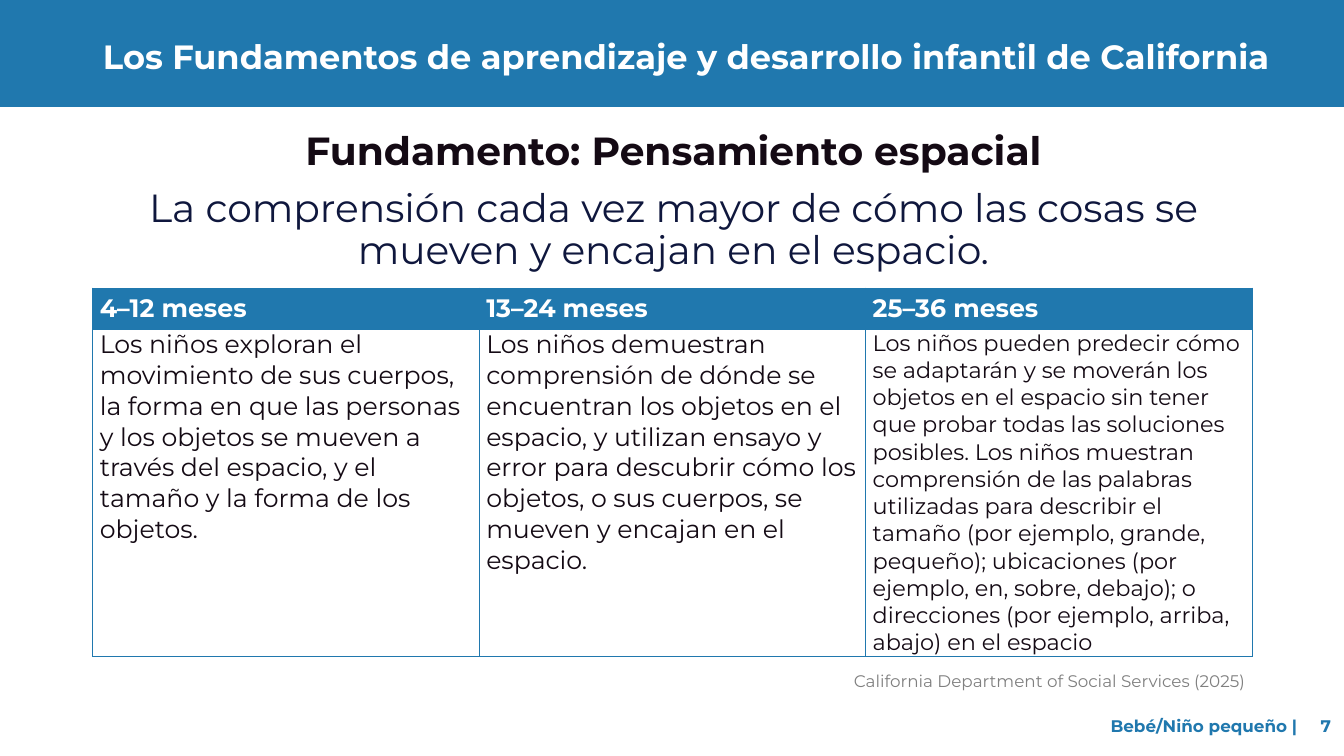
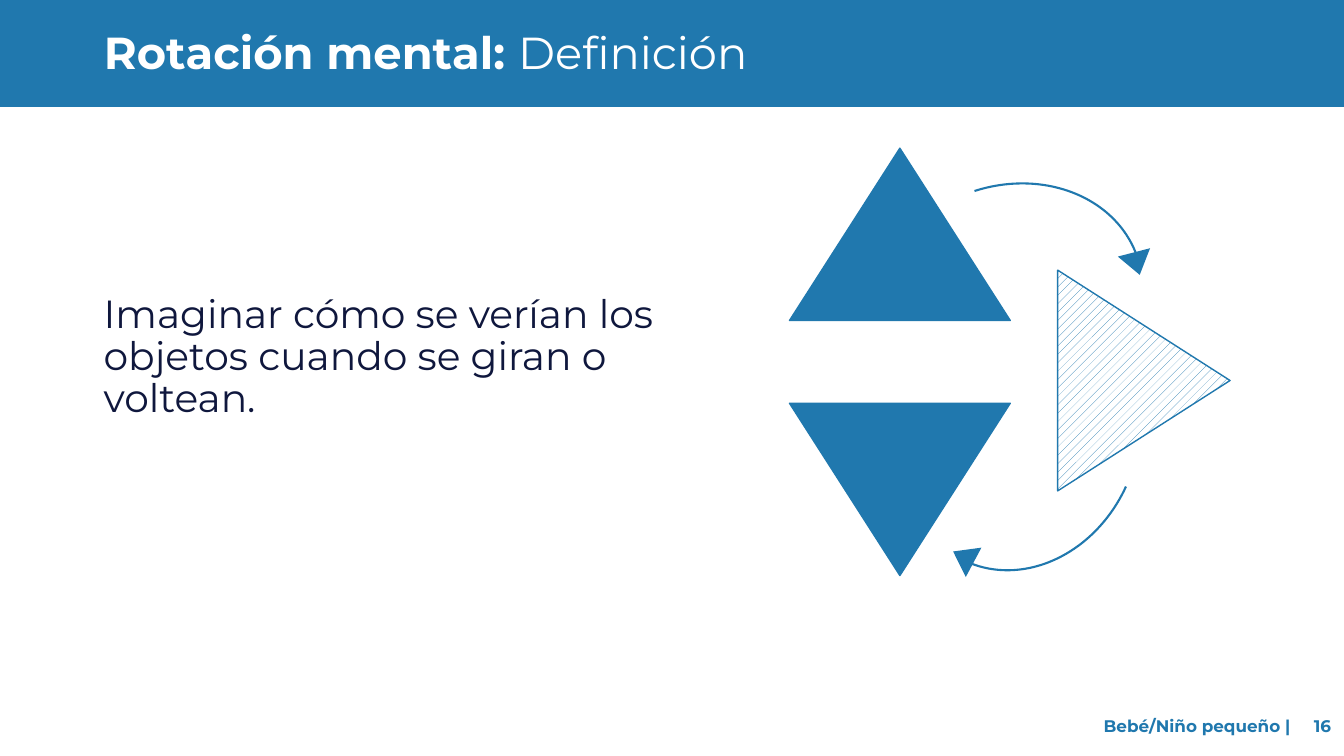
"""Build two slides on spatial thinking and mental rotation."""
from lxml import etree
from pptx import Presentation
from pptx import util as u
from pptx.dml.color import RGBColor
from pptx.enum import dml, shapes, text
from pptx.oxml import ns

BLUE = RGBColor(0x20, 0x78, 0xAE)
WHITE = RGBColor(0xFF, 0xFF, 0xFF)
BLACK = RGBColor(0x14, 0x0A, 0x14)
NAVY = RGBColor(0x0F, 0x17, 0x3D)
GRAY = RGBColor(0x80, 0x80, 0x80)
FONT = "Montserrat"
WIDTH, HEIGHT = 13.33, 7.5
LEFT, TOP, MIDDLE = text.PP_ALIGN.LEFT, text.MSO_ANCHOR.TOP, text.MSO_ANCHOR.MIDDLE
CENTER, RIGHT = text.PP_ALIGN.CENTER, text.PP_ALIGN.RIGHT
TRIANGLE = shapes.MSO_SHAPE.ISOSCELES_TRIANGLE

AGES = [
    ("4–12 meses", 18,
     "Los niños exploran el movimiento de sus cuerpos, la forma en que las personas "
     "y los objetos se mueven a través del espacio, y el tamaño y la forma de los objetos."),
    ("13–24 meses", 18,
     "Los niños demuestran comprensión de dónde se encuentran los objetos en el espacio, "
     "y utilizan ensayo y error para descubrir cómo los objetos, o sus cuerpos, "
     "se mueven y encajan en el espacio."),
    ("25–36 meses", 16,
     "Los niños pueden predecir cómo se adaptarán y se moverán los objetos en el espacio "
     "sin tener que probar todas las soluciones posibles. Los niños muestran comprensión "
     "de las palabras utilizadas para describir el tamaño (por ejemplo, grande, pequeño); "
     "ubicaciones (por ejemplo, en, sobre, debajo); o direcciones (por ejemplo, arriba, "
     "abajo) en el espacio"),
]


def place(shape, left, top, width, height):
    """Set the position and size of a shape in inches."""
    shape.left, shape.top = u.Inches(left), u.Inches(top)
    shape.width, shape.height = u.Inches(width), u.Inches(height)


def add_run(paragraph, words, size, color, bold=False):
    """Append a formatted run to a paragraph and return it."""
    run = paragraph.add_run()
    run.text = words
    run.font.name, run.font.size, run.font.bold = FONT, u.Pt(size), bold
    run.font.color.rgb = color
    return run


def write(frame, paragraphs, size, color, align=LEFT, anchor=TOP, spacing=1, gap=0):
    """Fill a text frame with paragraphs given as lists of (text, format) runs."""
    frame.word_wrap = True
    frame.auto_size = text.MSO_AUTO_SIZE.NONE
    frame.vertical_anchor = anchor
    for index, runs in enumerate(paragraphs):
        paragraph = frame.add_paragraph() if index else frame.paragraphs[0]
        paragraph.alignment, paragraph.line_spacing = align, spacing
        paragraph.space_before = u.Pt(gap if index else 0)
        for words, changes in runs:
            add_run(paragraph, words, **{"size": size, "color": color, **changes})


def add_text(slide, box, paragraphs, **style):
    """Add a text box and return its text frame."""
    frame = slide.shapes.add_textbox(*map(u.Inches, box)).text_frame
    write(frame, paragraphs, **style)
    return frame


def add_figure(slide, kind, box, rotation=0, line=None, filled=True):
    """Add a rotated blue preset shape."""
    shape = slide.shapes.add_shape(kind, *map(u.Inches, box))
    shape.shadow.inherit = False
    shape.rotation = rotation
    if filled:
        shape.fill.solid()
        shape.fill.fore_color.rgb = BLUE
    else:
        shape.fill.background()
    if line:
        shape.line.color.rgb, shape.line.width = BLUE, u.Pt(line)
    else:
        shape.line.fill.background()
    return shape


def add_slide(presentation, number, title_box, title_runs, title_size):
    """Add a slide with the blue band, title and numbered footer."""
    slide = presentation.slides.add_slide(presentation.slide_layouts[5])
    band = add_figure(slide, shapes.MSO_SHAPE.RECTANGLE, (0, 0, WIDTH, 1.06))
    slide.shapes.title.element.addprevious(band.element)
    place(slide.shapes.title, *title_box)
    write(slide.shapes.title.text_frame, [title_runs], title_size, WHITE, spacing=0.9)
    footer = add_text(slide, (9.49, 7, 3.81, 0.4), [[("Bebé/Niño pequeño |", {"bold": True})]],
                      size=12, color=BLUE, align=RIGHT, anchor=MIDDLE)
    space = add_run(footer.paragraphs[0], " ", 12, BLUE, True)
    space.font._element.set("spc", "1320")
    add_run(footer.paragraphs[0], str(number), 12, BLUE, True)
    return slide


def add_borders(cell):
    """Draw a thin blue line on each side of a table cell."""
    properties = cell._tc.get_or_add_tcPr()
    for side in ("lnL", "lnR", "lnT", "lnB"):
        line = etree.SubElement(properties, ns.qn(f"a:{side}"), w=str(u.Pt(1)))
        fill = etree.SubElement(line, ns.qn("a:solidFill"))
        etree.SubElement(fill, ns.qn("a:srgbClr"), val=str(BLUE))


def fill_cell(cell, words, size, color, fill, anchor=TOP, bold=False):
    """Write and format one table cell."""
    add_borders(cell)
    cell.fill.solid()
    cell.fill.fore_color.rgb = fill
    cell.margin_left = u.Inches(0.07)
    cell.margin_right = cell.margin_top = cell.margin_bottom = 0
    cell.vertical_anchor = anchor
    add_run(cell.text_frame.paragraphs[0], words, size, color, bold)


def add_age_table(slide, box, header_height):
    """Add the table with one column for each age range."""
    table = slide.shapes.add_table(2, len(AGES), *map(u.Inches, box)).table
    table.horz_banding = False
    table.rows[0].height = u.Inches(header_height)
    table.rows[1].height = u.Inches(box[3] - header_height)
    for column, (ages, size, description) in enumerate(AGES):
        fill_cell(table.cell(0, column), ages, 18, WHITE, BLUE, MIDDLE, True)
        fill_cell(table.cell(1, column), description, size, BLACK, WHITE)


def build_foundation(presentation):
    """Build the slide on the spatial thinking foundation."""
    title = "Los Fundamentos de aprendizaje y desarrollo infantil de California"
    slide = add_slide(presentation, 7, (0.92, 0.35, 11.85, 0.46), [(title, {"bold": True})], 24)
    add_text(slide, (0.93, 1.26, 11.5, 1.61), [
        [("Fundamento: Pensamiento espacial", {"color": BLACK, "bold": True})],
        [("La comprensión cada vez mayor de cómo las cosas se mueven y encajan en el espacio.", {})],
    ], size=28, color=NAVY, align=CENTER, spacing=0.9, gap=10)
    add_age_table(slide, (0.92, 2.86, 11.5, 3.64), 0.41)
    add_text(slide, (0.83, 6.61, 11.62, 0.3),
             [[("California Department of Social Services (2025)", {})]],
             size=12, color=GRAY, align=RIGHT)


def build_rotation(presentation):
    """Build the slide that defines mental rotation."""
    slide = add_slide(presentation, 16, (0.93, 0.26, 11.85, 0.59),
                      [("Rotación mental: ", {"bold": True}), ("Definición", {})], 32)
    add_text(slide, (0.93, 1.37, 6.31, 4.36),
             [[("Imaginar cómo se verían los objetos cuando se giran o voltean.", {})]],
             size=28, color=NAVY, anchor=MIDDLE, spacing=0.9)
    for left, top, rotation in ((7.83, 1.47, 0), (7.83, 4, 180), (10.25, 2.92, 90)):
        triangle = add_figure(slide, TRIANGLE, (left, top, 2.19, 1.71), rotation, line=1)
    triangle.fill.patterned()
    triangle.fill.pattern = dml.MSO_PATTERN.PERCENT_20
    triangle.fill.fore_color.rgb, triangle.fill.back_color.rgb = BLUE, WHITE
    arrows = (((8.68, 1.84), 342.1, (11.11, 2.5), 165.5),
              ((8.8, 3.22), 114.6, (9.39, 5.41), 298))
    for arc, arc_rotation, tip, tip_rotation in arrows:
        add_figure(slide, shapes.MSO_SHAPE.ARC, (*arc, 2.67, 2.27), arc_rotation, 1.5, False)
        add_figure(slide, TRIANGLE, (*tip, 0.33, 0.23), tip_rotation)


def main():
    """Build and save the presentation."""
    presentation = Presentation()
    presentation.slide_width, presentation.slide_height = u.Inches(WIDTH), u.Inches(HEIGHT)
    build_foundation(presentation)
    build_rotation(presentation)
    presentation.save("out.pptx")


if __name__ == "__main__":
    main()
